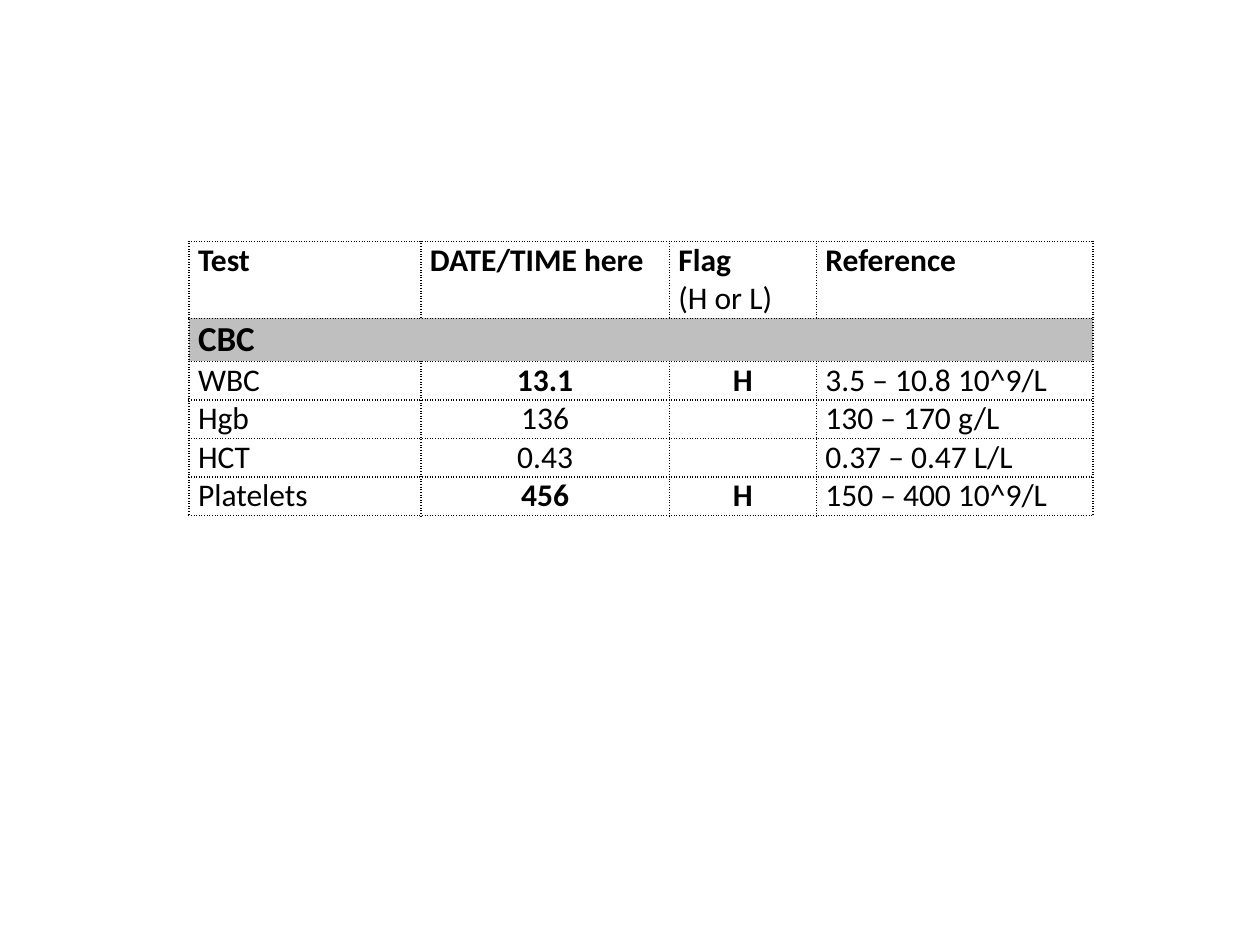
from lxml.etree import SubElement
from pptx import Presentation
from pptx.dml.color import RGBColor
from pptx.enum.text import PP_ALIGN
from pptx.oxml.ns import qn
from pptx.util import Pt

COLORS = {"text": "000000", "border": "000000", "plain": "FFFFFF", "band": "BFBFBF"}
FONT = "Calibri"

# Content: each header is a list of (text, bold) lines
HEADERS = [
    [("Test", True)],
    [("DATE/TIME here", True)],
    [("Flag", True), ("(H or L)", False)],
    [("Reference", True)],
]
SECTION = "CBC"
RESULTS = [
    ("WBC", "13.1", "H", "3.5 – 10.8 10^9/L"),
    ("Hgb", "136", "", "130 – 170 g/L"),
    ("HCT", "0.43", "", "0.37 – 0.47 L/L"),
    ("Platelets", "456", "H", "150 – 400 10^9/L"),
]

# Geometry in points
LEFT, TOP = 108, 138
COL_WIDTHS = [132.5, 142, 84, 158]
ROW_HEIGHTS = [44, 24.4] + [22] * len(RESULTS)


def set_borders(cell):
    tc_pr = cell._tc.get_or_add_tcPr()
    for i, side in enumerate(("lnL", "lnR", "lnT", "lnB")):
        ln = SubElement(tc_pr, qn(f"a:{side}"), w=str(Pt(1)))
        fill = SubElement(ln, qn("a:solidFill"))
        SubElement(fill, qn("a:srgbClr"), val=COLORS["border"])
        SubElement(ln, qn("a:prstDash"), val="sysDot")
        tc_pr.remove(ln)
        tc_pr.insert(i, ln)  # borders come before the fill


def style_cell(cell, fill):
    cell.margin_left = cell.margin_right = Pt(5.2)
    cell.margin_top = cell.margin_bottom = 0
    cell.fill.solid()
    cell.fill.fore_color.rgb = RGBColor.from_string(COLORS[fill])
    set_borders(cell)


def write(cell, lines, size=18, align=None):
    tf = cell.text_frame
    for i, (text, bold) in enumerate(lines):
        p = tf.add_paragraph() if i else tf.paragraphs[0]
        p.alignment = align
        r = p.add_run()
        r.text = text
        r.font.name, r.font.size, r.font.bold = FONT, Pt(size), bold
        r.font.color.rgb = RGBColor.from_string(COLORS["text"])


prs = Presentation()
prs.slide_width, prs.slide_height = Pt(720), Pt(540)
slide = prs.slides.add_slide(prs.slide_layouts[6])

# Table grid
table = slide.shapes.add_table(
    len(ROW_HEIGHTS), len(COL_WIDTHS), Pt(LEFT), Pt(TOP),
    Pt(sum(COL_WIDTHS)), Pt(sum(ROW_HEIGHTS))).table
table.first_row = table.horz_banding = False
for column, width in zip(table.columns, COL_WIDTHS):
    column.width = Pt(width)
for i, (row, height) in enumerate(zip(table.rows, ROW_HEIGHTS)):
    row.height = Pt(height)
    for cell in row.cells:
        style_cell(cell, "band" if i == 1 else "plain")

# Header and section rows
for col, lines in enumerate(HEADERS):
    write(table.cell(0, col), lines)
table.cell(1, 0).merge(table.cell(1, len(COL_WIDTHS) - 1))
write(table.cell(1, 0), [(SECTION, True)], size=20)

# Result rows: flagged values are bold, value and flag are centred
for row, result in enumerate(RESULTS, start=2):
    flagged = bool(result[2])
    for col, text in enumerate(result):
        centred = col in (1, 2)
        if text:
            write(table.cell(row, col), [(text, centred and flagged)],
                  align=PP_ALIGN.CENTER if centred else None)

prs.save("out.pptx")
